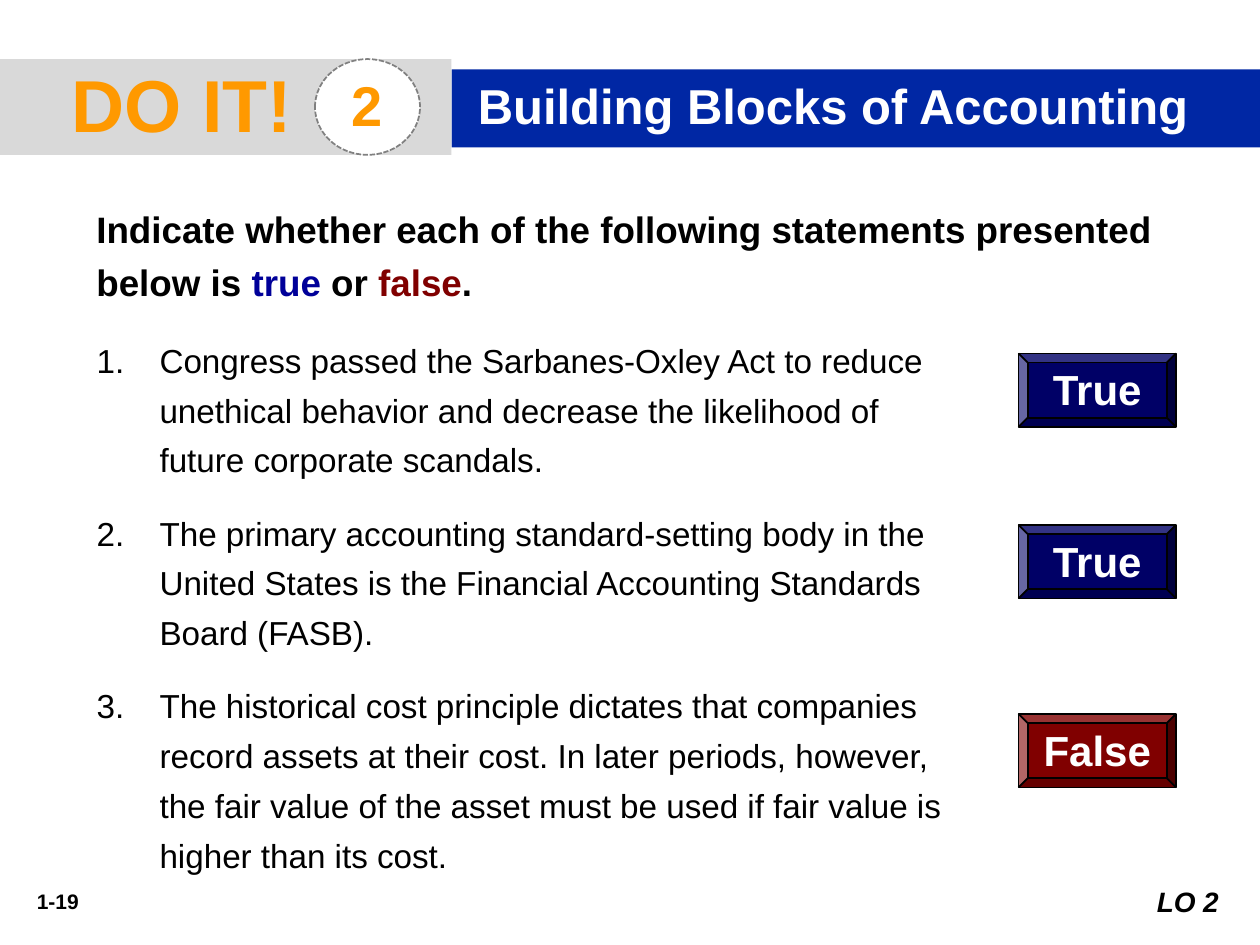
from pptx import Presentation
from pptx.dml.color import RGBColor
from pptx.enum import dml, shapes, text
from pptx.oxml.ns import qn
from pptx.util import Pt
from lxml import etree


class Theme:
    font = "Arial"
    black, white, grey, edge = "000000", "FFFFFF", "D9D9D9", "808080"
    orange, bar = "FF9900", "0027A4"
    blue, navy, red = "000099", "000066", "800000"
    label, head, mark, answer = 42, 28, 32, 24
    intro, item, goal, page = 21, 19, 16, 12


def place(shape, box, fill=None, line=None, pad=(7.2, 3.6, 7.2, 3.6), anchor="TOP", wrap=True):
    shape.left, shape.top, shape.width, shape.height = map(Pt, box)
    if fill:
        shape.fill.solid()
        shape.fill.fore_color.rgb = RGBColor.from_string(fill)
    if line:
        shape.line.color.rgb = RGBColor.from_string(line)
        shape.line.width = Pt(1)
    else:
        shape.line.fill.background()
    shape.shadow.inherit = False
    frame = shape.text_frame
    frame.margin_left, frame.margin_top, frame.margin_right, frame.margin_bottom = map(Pt, pad)
    frame.vertical_anchor = getattr(text.MSO_ANCHOR, anchor)
    frame.auto_size = text.MSO_AUTO_SIZE.NONE
    frame.word_wrap = wrap
    return frame


def style(para, size, color=Theme.black, bold=True, align="LEFT", indent=(0, 0), space=1, before=0):
    para.alignment = getattr(text.PP_ALIGN, align)
    para.line_spacing = space
    para.space_before = Pt(before)
    props = para._p.get_or_add_pPr()
    props.set("marL", str(Pt(indent[0])))
    props.set("indent", str(Pt(indent[1])))
    for run in para.runs:
        run.font.name = Theme.font
        run.font.size = Pt(size)
        run.font.bold = bold
        run.font.color.rgb = RGBColor.from_string(color)
    return props


deck = Presentation()
deck.slide_width, deck.slide_height = Pt(720), Pt(540)
slide = deck.slides.add_slide(deck.slide_layouts[1])
title, body = slide.placeholders
add = slide.shapes.add_shape
kind = shapes.MSO_SHAPE

frame = place(title, (258, 39.6, 462, 44.6), Theme.bar, pad=(6.5, 3.6, 6.5, 3.6))
frame.text = "Building Blocks of Accounting"
style(frame.paragraphs[0], Theme.head, Theme.white, indent=(8.6, 0))

frame = place(add(kind.RECTANGLE, 0, 0, 0, 0), (0, 33.8, 258, 54.7), Theme.grey, pad=(0, 0, 7.2, 3.6))
frame.text = "DO IT!"
style(frame.paragraphs[0], Theme.label, Theme.orange, indent=(41, 0))

badge = add(kind.OVAL, 0, 0, 0, 0)
frame = place(badge, (180, 33.8, 60, 54.7), Theme.white, Theme.edge, (7.2, 0, 7.2, 3.6), "MIDDLE")
badge.line.dash_style = dml.MSO_LINE.SQUARE_DOT
frame.text = "2"
style(frame.paragraphs[0], Theme.mark, Theme.orange, align="CENTER")

frame = place(slide.shapes.add_textbox(0, 0, 0, 0), (48, 109.5, 624, 65.5))
para = frame.paragraphs[0]
parts = [
    ("Indicate whether each of the following statements presented below is ", Theme.black),
    ("true", Theme.blue),
    (" or ", Theme.black),
    ("false", Theme.red),
    (".", Theme.black),
]
for words, color in parts:
    para.add_run().text = words
style(para, Theme.intro, space=1.2)
for run, (words, color) in zip(para.runs, parts):
    run.font.color.rgb = RGBColor.from_string(color)

items = [
    "Congress passed the Sarbanes-Oxley Act to reduce unethical behavior and decrease the likelihood of future corporate scandals.",
    "The primary accounting standard-setting body in the United States is the Financial Accounting Standards Board (FASB).",
    "The historical cost principle dictates that companies record assets at their cost. In later periods, however, the fair value of the asset must be used if fair value is higher than its cost.",
]
frame = place(body, (48, 185, 498, 327.6))
frame.text = "\n".join(items)
for row, para in enumerate(frame.paragraphs):
    props = style(para, Theme.item, bold=False, indent=(36, -36), space=1.25, before=13.3 if row else 0)
    etree.SubElement(props, qn("a:buFont")).set("typeface", Theme.font)
    etree.SubElement(props, qn("a:buAutoNum")).set("type", "arabicPeriod")

answers = [("True", 202, Theme.navy), ("True", 300, Theme.navy), ("False", 408, Theme.red)]
for word, top, fill in answers:
    frame = place(add(kind.BEVEL, 0, 0, 0, 0), (582, top, 90, 42), fill, Theme.black,
                  (7.2, 2.2, 7.2, 3.6), "MIDDLE", False)
    frame.text = word
    style(frame.paragraphs[0], Theme.answer, Theme.white, align="CENTER")

frame = place(slide.shapes.add_textbox(0, 0, 0, 0), (648, 502, 60, 26.6))
frame.text = "LO 2 "
style(frame.paragraphs[0], Theme.goal, align="RIGHT", indent=(36, -36))
frame.paragraphs[0].runs[0].font.italic = True

frame = place(slide.shapes.add_textbox(0, 0, 0, 0), (6, 504, 54, 21.6))
frame.text = "1-19"
style(frame.paragraphs[0], Theme.page, align="CENTER")

deck.save("out.pptx")
